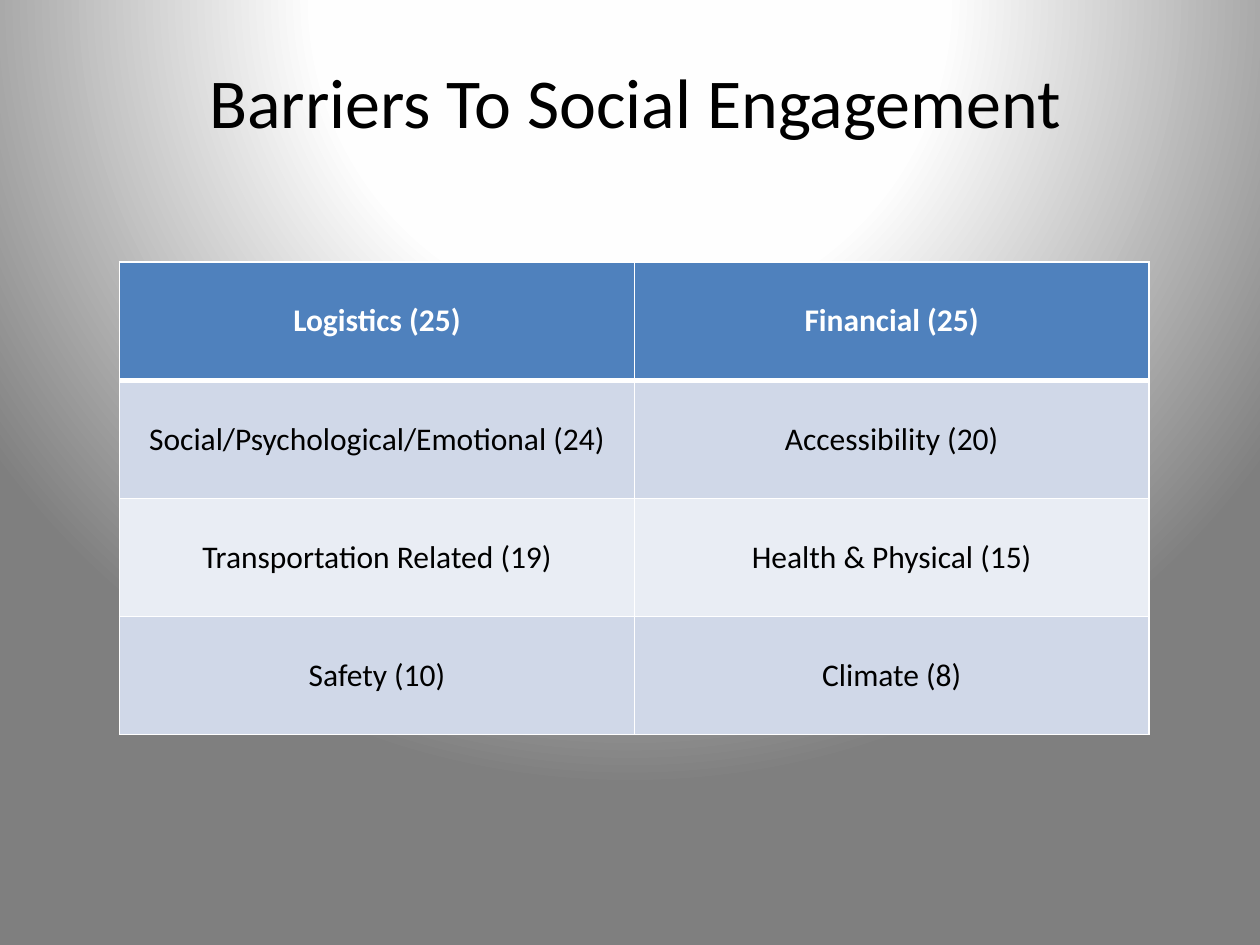
from lxml import etree
from pptx import Presentation
from pptx.dml.color import RGBColor
from pptx.enum import text
from pptx.oxml import ns, parse_xml
from pptx.util import Inches, Pt

# Content
TITLE = "Barriers To Social Engagement"
BARRIERS = [
    ("Logistics (25)", "Financial (25)"),
    ("Social/Psychological/Emotional (24)", "Accessibility (20)"),
    ("Transportation Related (19)", "Health & Physical (15)"),
    ("Safety (10)", "Climate (8)"),
]

# Style
FONT = "Calibri"
BLACK = RGBColor(0x00, 0x00, 0x00)
WHITE = RGBColor(0xFF, 0xFF, 0xFF)
HEADER = RGBColor(0x4F, 0x81, 0xBD)
BANDS = [RGBColor(0xE9, 0xED, 0xF4), RGBColor(0xD0, 0xD8, 0xE8)]
BACKGROUND = [
    (0, WHITE),
    (40, RGBColor(0xFE, 0xFE, 0xFE)),
    (100, RGBColor(0x7F, 0x7F, 0x7F)),
]


def set_background(s):
    """Circular gradient centred above the slide."""
    s.background.fill.gradient()
    old = s._element.xpath("./p:cSld/p:bg//a:gradFill")[0]
    stops = "".join(
        f'<a:gs pos="{pos * 1000}"><a:srgbClr val="{color}"/></a:gs>'
        for pos, color in BACKGROUND
    )
    new = parse_xml(
        f'<a:gradFill {ns.nsdecls("a")} rotWithShape="1"><a:gsLst>{stops}</a:gsLst>'
        '<a:path path="circle"><a:fillToRect l="50000" t="-80000" r="50000" b="180000"/>'
        "</a:path></a:gradFill>"
    )
    old.getparent().replace(old, new)


def set_text(tf, wording, size, color, bold=False):
    tf.text = wording
    p = tf.paragraphs[0]
    p.alignment = text.PP_ALIGN.CENTER
    font = p.runs[0].font
    font.name, font.size, font.bold = FONT, Pt(size), bold
    font.color.rgb = color


def set_borders(cell, widths):
    tc_pr = cell._tc.get_or_add_tcPr()
    for side, width in widths.items():
        ln = etree.SubElement(tc_pr, ns.qn(f"a:ln{side}"), w=str(Pt(width)))
        fill = etree.SubElement(ln, ns.qn("a:solidFill"))
        etree.SubElement(fill, ns.qn("a:srgbClr"), val=str(WHITE))


prs = Presentation()
prs.slide_width, prs.slide_height = Inches(10), Inches(7.5)
s = prs.slides.add_slide(prs.slide_layouts[5])
set_background(s)

# Title
title = s.shapes.title
title.left, title.top = Inches(0.54), Inches(0.17)
title.width, title.height = Inches(9), Inches(1.25)
title.text_frame.vertical_anchor = text.MSO_ANCHOR.MIDDLE
set_text(title.text_frame, TITLE, 40, BLACK)

# Table of barriers
table = s.shapes.add_table(
    len(BARRIERS), len(BARRIERS[0]),
    Inches(0.95), Inches(2.08), Inches(8.17), Inches(3.75),
).table
for i, row in enumerate(BARRIERS):
    is_header = i == 0
    for j, wording in enumerate(row):
        cell = table.cell(i, j)
        cell.vertical_anchor = text.MSO_ANCHOR.MIDDLE
        set_text(cell.text_frame, wording, 18, WHITE if is_header else BLACK, is_header)
        top, bottom = (3 if i == 1 else 1), (3 if is_header else 1)
        set_borders(cell, {"L": 1, "R": 1, "T": top, "B": bottom})
        cell.fill.solid()
        cell.fill.fore_color.rgb = HEADER if is_header else BANDS[i % 2]

prs.save("out.pptx")
